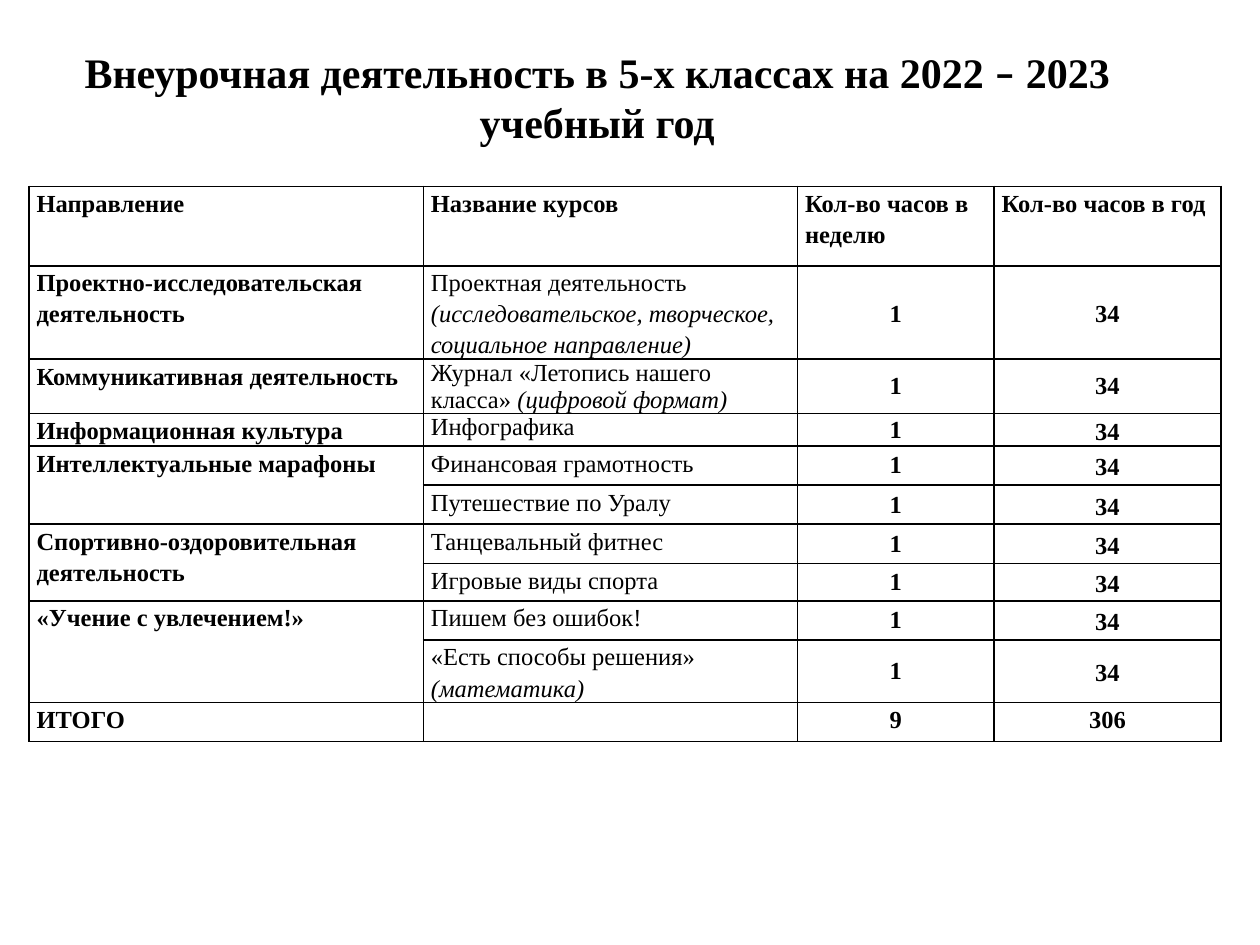
from dataclasses import dataclass
from lxml import etree
from pptx import Presentation
from pptx.dml.color import RGBColor
from pptx.enum import text
from pptx.oxml import ns
from pptx.util import Inches, Pt

COLORS = {"ink": "000000"}
FONT = "Times New Roman"
COLUMNS = [3.13, 2.97, 1.56, 1.8]
HEADERS = ["Направление", "Название курсов", "Кол-во часов в неделю", "Кол-во часов в год"]
HEADER_HEIGHT = 0.63
TOTAL = ["ИТОГО", "", "9", "306"]
ROW_HEIGHT = 0.31
WIDE = 1.15


@dataclass
class Course:
    area: str
    name: str
    detail: str = ""
    height: float = ROW_HEIGHT
    name_spacing: float = WIDE
    week_spacing: float = 1.0
    year_spacing: float = WIDE
    area_rows: int = 1


COURSES = [
    Course("Проектно-исследовательская деятельность", "Проектная деятельность ",
           "(исследовательское, творческое, социальное направление)", week_spacing=WIDE),
    Course("Коммуникативная деятельность", "Журнал «Летопись нашего класса» ",
           "(цифровой формат)", name_spacing=1.0, year_spacing=1.0),
    Course("Информационная культура", "Инфографика", height=0.26, name_spacing=1.0),
    Course("Интеллектуальные марафоны", "Финансовая грамотность", area_rows=2),
    Course("", "Путешествие по Уралу"),
    Course("Спортивно-оздоровительная деятельность", "Танцевальный фитнес", area_rows=2),
    Course("", "Игровые виды спорта", height=0.3),
    Course("«Учение с увлечением!»", "Пишем без ошибок!", area_rows=2),
    Course("", "«Есть способы решения» ", "(математика)"),
]


def add_run(p, words: str, size: int, bold: bool = True, italic: bool = False,
            font: str = FONT) -> None:
    r = p.add_run()
    r.text = words
    r.font.name = font
    r.font.size = Pt(size)
    r.font.bold = bold
    r.font.italic = italic
    r.font.color.rgb = RGBColor.from_string(COLORS["ink"])


def style_cell(cell) -> None:
    cell.margin_left = cell.margin_right = Inches(0.06)
    cell.margin_top = cell.margin_bottom = 0
    tc_pr = cell._tc.get_or_add_tcPr()
    for side in ("lnL", "lnR", "lnT", "lnB"):
        ln = etree.SubElement(tc_pr, ns.qn(f"a:{side}"), w=str(Pt(1)))
        fill = etree.SubElement(ln, ns.qn("a:solidFill"))
        etree.SubElement(fill, ns.qn("a:srgbClr"), val=COLORS["ink"])
    cell.fill.background()


def write_cell(cell, words: str, detail: str = "", bold: bool = True, spacing: float = WIDE,
               centered: bool = False, middle: bool = False) -> None:
    p = cell.text_frame.paragraphs[0]
    p.line_spacing = spacing
    if centered:
        p.alignment = text.PP_ALIGN.CENTER
    if middle:
        cell.vertical_anchor = text.MSO_ANCHOR.MIDDLE
    if words:
        add_run(p, words, 14, bold)
    else:
        etree.SubElement(p._p, ns.qn("a:endParaRPr"), sz="1400")
    if detail:
        add_run(p, detail, 14, bold, italic=True)


def add_course(table, row: int, course: Course) -> None:
    if course.area:
        write_cell(table.cell(row, 0), course.area)
    if course.area_rows > 1:
        table.cell(row, 0).merge(table.cell(row + course.area_rows - 1, 0))
    write_cell(table.cell(row, 1), course.name, course.detail, False, course.name_spacing)
    write_cell(table.cell(row, 2), "1", spacing=course.week_spacing, centered=True, middle=True)
    write_cell(table.cell(row, 3), "34", spacing=course.year_spacing, centered=True, middle=True)


def add_hours_table(slide) -> None:
    heights = [HEADER_HEIGHT, *(c.height for c in COURSES), ROW_HEIGHT]
    frame = slide.shapes.add_table(len(heights), len(COLUMNS), Inches(0.23), Inches(1.48),
                                   Inches(sum(COLUMNS)), Inches(sum(heights)))
    table = frame.table
    table.first_row = table.horz_banding = False
    for column, width in zip(table.columns, COLUMNS):
        column.width = Inches(width)
    for row, height in zip(table.rows, heights):
        row.height = Inches(height)
    for cell in table.iter_cells():
        style_cell(cell)
    for col, words in enumerate(HEADERS):
        write_cell(table.cell(0, col), words)
    for row, course in enumerate(COURSES, 1):
        add_course(table, row, course)
    for col, words in enumerate(TOTAL):
        write_cell(table.cell(len(heights) - 1, col), words, centered=col > 1)


def add_title(slide) -> None:
    sp = slide.shapes.add_textbox(Inches(0.39), Inches(0.31), Inches(8.7), Inches(0.91))
    tf = sp.text_frame
    tf.word_wrap = True
    tf.auto_size = text.MSO_AUTO_SIZE.SHAPE_TO_FIT_TEXT
    tf.vertical_anchor = text.MSO_ANCHOR.MIDDLE
    p = tf.paragraphs[0]
    p.alignment = text.PP_ALIGN.CENTER
    add_run(p, "Внеурочная деятельность в 5-х классах на 2022 ", 24)
    add_run(p, "–", 24, font="Calibri")
    add_run(p, " 2023 учебный год", 24)


def main() -> None:
    prs = Presentation()
    prs.slide_width, prs.slide_height = Inches(10), Inches(7.5)
    s = prs.slides.add_slide(prs.slide_layouts[6])
    add_hours_table(s)
    add_title(s)
    prs.save("out.pptx")


if __name__ == "__main__":
    main()
